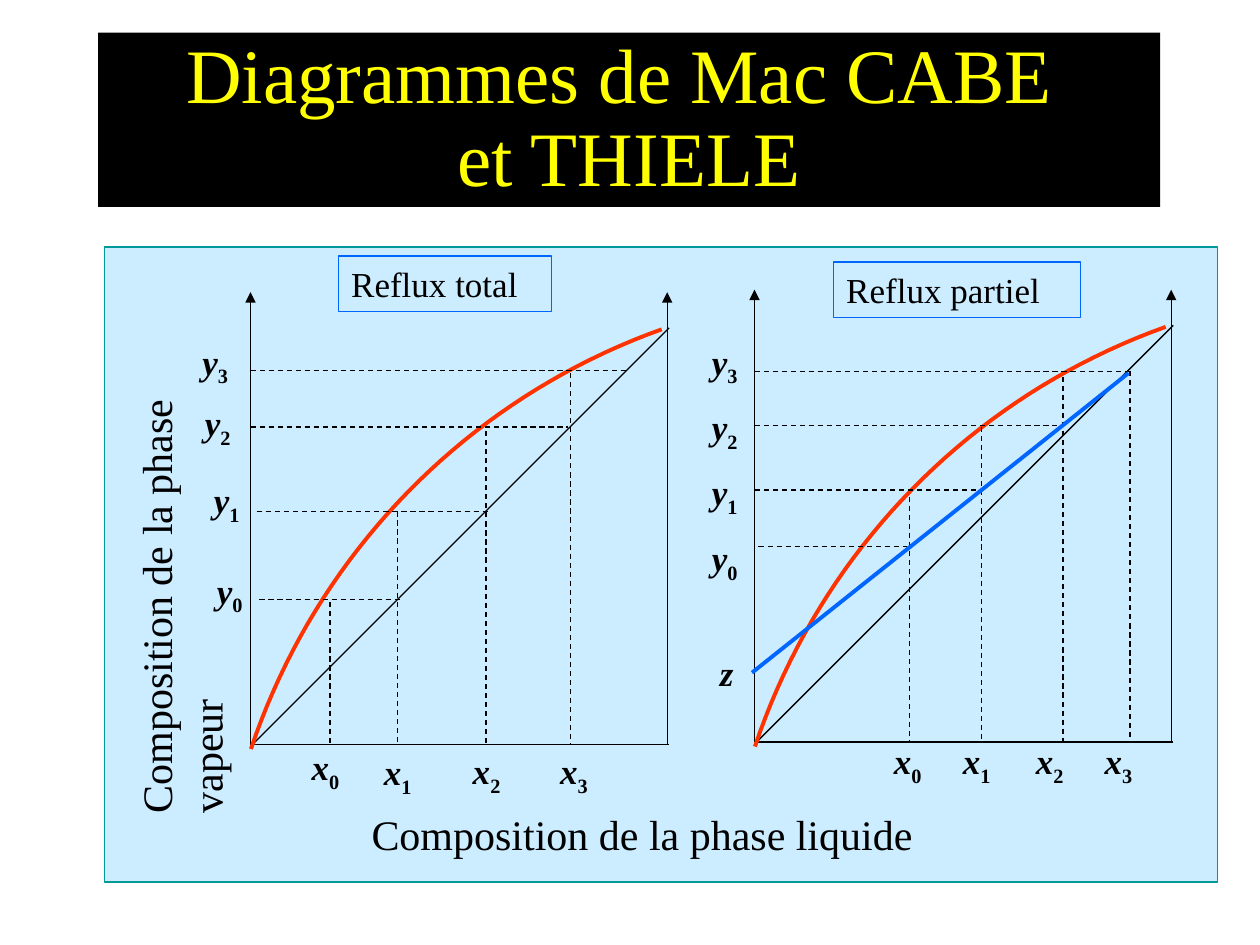
from pptx import Presentation
from pptx import util as u
from pptx.dml.color import RGBColor
from pptx.enum import dml, shapes, text
from pptx.oxml.ns import qn
from lxml import etree

COLORS = {
    "ink": "010000", "title": "FFFF00", "panel": "CCECFF", "panel_edge": "009999",
    "curve": "FF3300", "operating": "0066FF",
}
FONT = "Times New Roman"
LABEL_W, LABEL_H = 1.4, 1.09

prs = Presentation()
prs.slide_width, prs.slide_height = u.Cm(25.4), u.Cm(19.05)
slide = prs.slides.add_slide(prs.slide_layouts[6])


def stroke(start, end, color="ink", width=0.75, dashed=False, arrow=False):
    """Draw a straight line between two points given in cm."""
    line = slide.shapes.add_connector(
        shapes.MSO_CONNECTOR.STRAIGHT, *(u.Cm(v) for v in (*start, *end)))
    line.line.color.rgb = RGBColor.from_string(COLORS[color])
    line.line.width = u.Pt(width)
    if dashed:
        line.line.dash_style = dml.MSO_LINE.DASH
    if arrow:
        etree.SubElement(line.line._get_or_add_ln(), qn("a:tailEnd"), type="triangle")
    etree.SubElement(line._element.spPr, qn("a:effectLst"))


def box(at, words="", sub="", fill=None, edge=None, color="ink", align="LEFT",
        anchor="TOP", wrap=True, spacing=1.0, **font):
    """Place a text box, or a rectangle if filled or edged; sub is a subscript."""
    place = [u.Cm(v) for v in at]
    if fill or edge:
        frame = slide.shapes.add_shape(shapes.MSO_SHAPE.RECTANGLE, *place)
        frame.shadow.inherit = False
    else:
        frame = slide.shapes.add_textbox(*place)
    if fill:
        frame.fill.solid()
        frame.fill.fore_color.rgb = RGBColor.from_string(COLORS[fill])
    else:
        frame.fill.background()
    if edge:
        frame.line.color.rgb = RGBColor.from_string(COLORS[edge])
        frame.line.width = u.Pt(0.75)
    else:
        frame.line.fill.background()
    body = frame.text_frame
    body.word_wrap = wrap
    body.vertical_anchor = text.MSO_ANCHOR[anchor]
    para = body.paragraphs[0]
    para.alignment = text.PP_ALIGN[align]
    para.line_spacing = spacing
    para.text = words
    if sub:
        para.add_run().text = sub
        para.runs[1]._r.get_or_add_rPr().set("baseline", "-25000")
    for run in para.runs:
        for name, value in {"name": FONT, "size": u.Pt(20), **font}.items():
            setattr(run.font, name, value)
        run.font.color.rgb = RGBColor.from_string(COLORS[color])
    if sub:
        para.runs[1].font.italic = False
    return frame


box((1.98, 0.66, 21.41, 3.51), "Diagrammes de Mac CABE \vet THIELE", fill="ink",
    color="title", align="CENTER", anchor="MIDDLE", spacing=0.9, size=u.Pt(44))
box((2.11, 4.98, 22.43, 12.8), fill="panel", edge="panel_edge")

# Everything below is measured in cm from each diagram's origin, upwards.
# levels: (height, line start, line end); drops: (x, top)
# x_labels and y_labels: (centre, top of the label)
diagrams = [
    {
        "origin": (5.05, 15.01),
        "heading": ("Reflux total", (6.83, 5.16, 4.29, 1.12)),
        "levels": [(2.92, 0.18, 3.02), (4.7, 0.13, 4.83), (6.4, 0, 6.4), (7.54, 0, 7.59)],
        "drops": [(1.6, 2.87), (2.97, 4.7), (4.75, 6.32), (6.45, 7.49)],
        "x_labels": [(1.51, 0.1), (2.97, 0), (4.76, 0.03), (6.52, 0.03)],
        "y_labels": [(-0.42, 3.66), (-0.48, 5.49), (-0.66, 7.04), (-0.71, 8.28)],
    },
    {
        "origin": (15.21, 14.96),
        "heading": ("Reflux partiel", (16.81, 5.28, 4.98, 1.12)),
        "levels": [(3.94, 0.08, 3.07), (5.08, 0, 4.5), (6.38, 0, 6.1), (7.47, 0, 7.54)],
        "drops": [(3.12, 4.95), (4.57, 6.35), (6.22, 7.37), (7.57, 7.49)],
        "x_labels": [(x, 0.18) for x in (3.09, 4.48, 5.95, 7.34)],
        "y_labels": [(-0.6, 4.27 + 1.32 * i) for i in range(4)],
        "operating": ((7.54, 7.44), (-0.05, 1.4)),
        "z": (-0.56, 1.96),
    },
]
frame_lines = [
    ((0, 0), (8.44, 0), False),
    ((0, 0), (0, 9.12), True),
    ((8.4, 0), (8.4, 9.12), True),
    ((0.04, 0), (8.44, 8.4), False),
]
equilibrium = [(8.29, 8.37), (4.38, 6.97), (1.34, 3.87), (0.01, -0.09)]
CURVE_STEPS = 40

for diagram in diagrams:
    left, base = diagram["origin"]
    for (x1, y1), (x2, y2), arrow in frame_lines:
        stroke((left + x1, base - y1), (left + x2, base - y2), arrow=arrow)

    points = []
    for step in range(CURVE_STEPS + 1):
        t = step / CURVE_STEPS
        weights = ((1 - t) ** 3, 3 * t * (1 - t) ** 2, 3 * t ** 2 * (1 - t), t ** 3)
        x, y = (sum(w * p[axis] for w, p in zip(weights, equilibrium)) for axis in (0, 1))
        points.append((u.Cm(left + x), u.Cm(base - y)))
    outline = slide.shapes.build_freeform(*points[0])
    outline.add_line_segments(points[1:], close=False)
    curve = outline.convert_to_shape()
    curve.shadow.inherit = False
    curve.fill.background()
    curve.line.color.rgb = RGBColor.from_string(COLORS["curve"])
    curve.line.width = u.Pt(2.25)

    for height, start, end in diagram["levels"]:
        stroke((left + start, base - height), (left + end, base - height), dashed=True)
    for x, top in diagram["drops"]:
        stroke((left + x, base - top), (left + x, base), dashed=True)
    if "operating" in diagram:
        (x1, y1), (x2, y2) = diagram["operating"]
        stroke((left + x1, base - y1), (left + x2, base - y2), "operating", 2.25)

    labels = [(letter, str(i), spot) for letter in "xy"
              for i, spot in enumerate(diagram[letter + "_labels"])]
    if "z" in diagram:
        labels.append(("z", "", diagram["z"]))
    for letter, index, (center, top) in labels:
        box((left + center - LABEL_W / 2, base - top, LABEL_W, LABEL_H), letter, index,
            align="CENTER", bold=True, italic=True)

    heading, place = diagram["heading"]
    box(place, heading, edge="operating")

box((7.24, 16.18, 12.22, 1.27), "Composition de la phase liquide", size=u.Pt(24))
vapour_axis = box((-2.54, 10.34, 11.35, 1.27), "Composition de la phase vapeur",
                  wrap=False, size=u.Pt(24))
vapour_axis.rotation = 270

prs.save("out.pptx")
